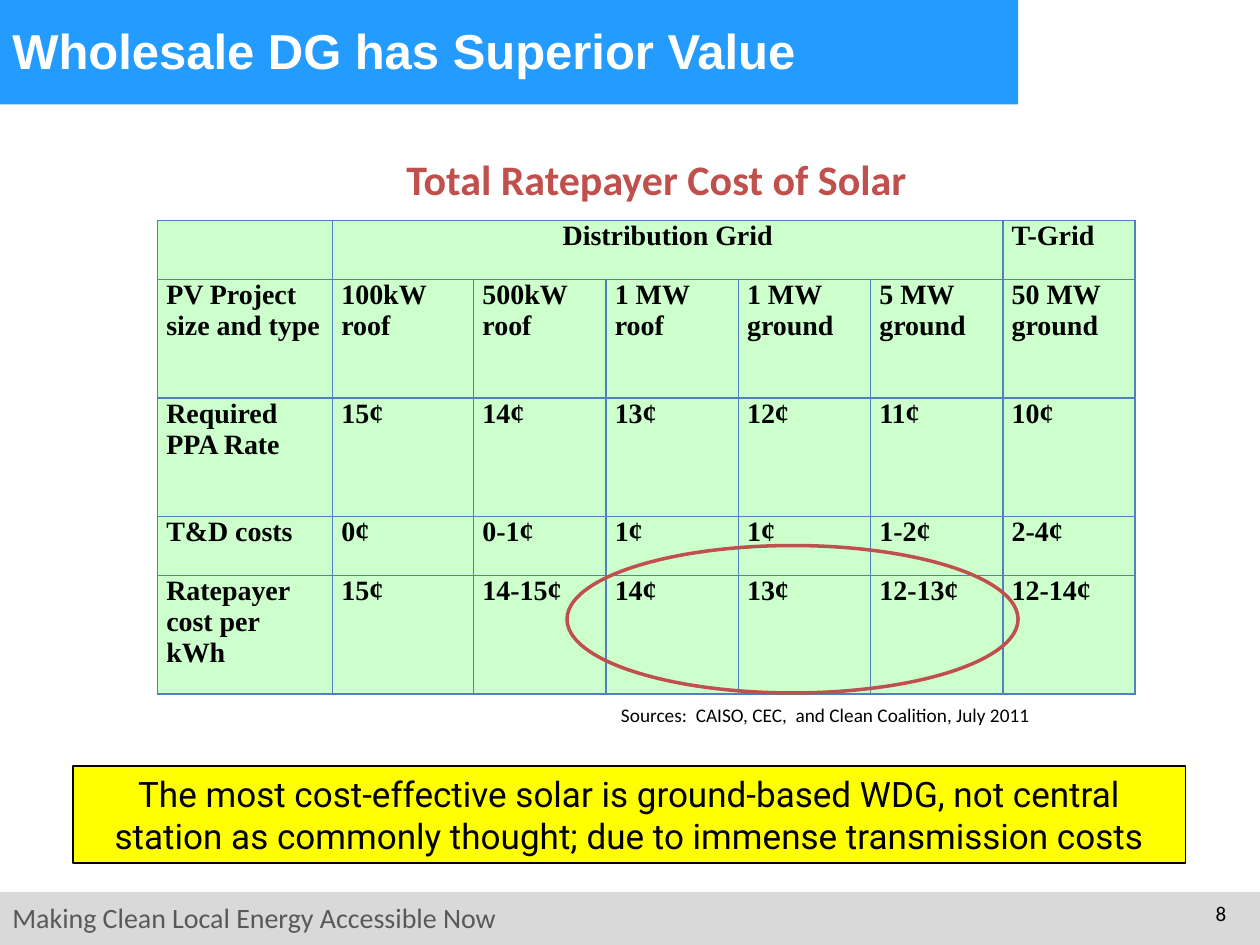
"""Build the slide comparing ratepayer cost of solar by project size."""
from lxml import etree
from pptx import Presentation
from pptx.dml.color import RGBColor
from pptx.enum.shapes import MSO_SHAPE
from pptx.enum.text import MSO_ANCHOR, PP_ALIGN
from pptx.oxml.ns import qn
from pptx.util import Inches, Pt

RECTANGLE, OVAL = MSO_SHAPE.RECTANGLE, MSO_SHAPE.OVAL
LEFT, CENTER, RIGHT = PP_ALIGN.LEFT, PP_ALIGN.CENTER, PP_ALIGN.RIGHT
TOP, MIDDLE = MSO_ANCHOR.TOP, MSO_ANCHOR.MIDDLE
COLORS = {
    "header": "249CFF", "footer": "D9D9D9", "tagline": "595959",
    "white": "FFFFFF", "black": "000000", "callout": "FFFF00",
    "accent": "C0504D", "cell": "CCFFCC", "border": "4F81BD",
}


def write(frame, text, font, size, color, bold=False, align=LEFT):
    paragraph = frame.paragraphs[0]
    paragraph.text = text
    paragraph.alignment = align
    formats = {"name": font, "size": Pt(size), "bold": bold}
    for attribute, value in formats.items():
        setattr(paragraph.font, attribute, value)
    paragraph.font.color.rgb = RGBColor.from_string(COLORS[color])


def add_block(kind, box, fill=None, line=None, width=0):
    block = slide.shapes.add_shape(kind, *map(Inches, box))
    block.shadow.inherit = False
    if fill:
        block.fill.solid()
        block.fill.fore_color.rgb = RGBColor.from_string(COLORS[fill])
    else:
        block.fill.background()
    if line:
        block.line.color.rgb = RGBColor.from_string(COLORS[line])
        block.line.width = Pt(width)
    else:
        block.line.fill.background()
    return block


prs = Presentation()
prs.slide_width, prs.slide_height = Inches(10), Inches(7.5)
slide = prs.slides.add_slide(prs.slide_layouts[6])

add_block(RECTANGLE, (0, 7.08, 10, 0.42), "footer")
add_block(RECTANGLE, (0, 0, 8.08, 0.83), "header")

callout = add_block(RECTANGLE, (0.58, 6.08, 8.83, 0.77), "callout", "black", 0.75)
callout.text_frame.word_wrap = True
callout.text_frame.vertical_anchor = TOP
write(callout.text_frame,
      "The most cost-effective solar is ground-based WDG, not central station "
      "as commonly thought; due to immense transmission costs",
      "Roboto", 20, "black", align=CENTER)

COLUMN_WIDTHS = [1.39, 1.12] + [1.05] * 5
ROW_HEIGHTS = [0.47, 0.94, 0.94, 0.47, 0.94]
COSTS = [
    ["", "Distribution Grid", "", "", "", "", "T-Grid"],
    ["PV Project size and type", "100kW roof", "500kW roof", "1 MW roof",
     "1 MW ground", "5 MW ground", "50 MW ground"],
    ["Required PPA Rate", "15¢", "14¢", "13¢", "12¢", "11¢", "10¢"],
    ["T&D costs", "0¢", "0-1¢", "1¢", "1¢", "1-2¢", "2-4¢"],
    ["Ratepayer cost per kWh", "15¢", "14-15¢", "14¢", "13¢", "12-13¢", "12-14¢"],
]
CELL_FORMAT = {
    "margin_left": Inches(0.07), "margin_right": Inches(0.07),
    "margin_top": 0, "margin_bottom": 0, "vertical_anchor": TOP,
}
costs = slide.shapes.add_table(
    len(COSTS), len(COLUMN_WIDTHS), Inches(1.25), Inches(1.75),
    Inches(sum(COLUMN_WIDTHS)), Inches(sum(ROW_HEIGHTS))).table
for column, width in zip(costs.columns, COLUMN_WIDTHS):
    column.width = Inches(width)
for row, height in zip(costs.rows, ROW_HEIGHTS):
    row.height = Inches(height)
costs.cell(0, 1).merge(costs.cell(0, 5))

for r, values in enumerate(COSTS):
    for c, value in enumerate(values):
        cell = costs.cell(r, c)
        for attribute, setting in CELL_FORMAT.items():
            setattr(cell, attribute, setting)
        align = CENTER if cell.is_merge_origin else LEFT
        write(cell.text_frame, value, "Times New Roman", 16, "black", True, align)
        properties = cell._tc.get_or_add_tcPr()
        for side in ("lnL", "lnR", "lnT", "lnB"):
            edge = etree.SubElement(properties, qn(f"a:{side}"), w=str(Pt(1)))
            paint = etree.SubElement(edge, qn("a:solidFill"))
            etree.SubElement(paint, qn("a:srgbClr"), val=COLORS["border"])
        cell.fill.solid()
        cell.fill.fore_color.rgb = RGBColor.from_string(COLORS["cell"])

LABELS = [
    ((0, 7.1, 5.17, 0.37), TOP, True,
     ("Making Clean Local Energy Accessible Now", "Calibri", 16, "tagline")),
    ((9.33, 7.1, 0.5, 0.4), TOP, True,
     ("8", "Calibri", 12, "black", False, RIGHT)),
    ((0, 0.08, 7, 0.64), MIDDLE, False,
     ("Wholesale DG has Superior Value", "Arial", 28, "white", True)),
    ((4.83, 5.53, 4.25, 0.29), TOP, True,
     ("Sources:  CAISO, CEC,  and Clean Coalition, July 2011", "Calibri", 11, "black")),
    ((2.75, 1.17, 4.92, 0.51), TOP, True,
     ("Total Ratepayer Cost of Solar", "Calibri", 24, "accent", True, CENTER)),
]
for box, anchor, wrap, wording in LABELS:
    frame = slide.shapes.add_textbox(*map(Inches, box)).text_frame
    frame.word_wrap = wrap
    frame.vertical_anchor = anchor
    write(frame, *wording)

add_block(OVAL, (4.5, 4.33, 3.58, 1.17), line="accent", width=2)

prs.save("out.pptx")
